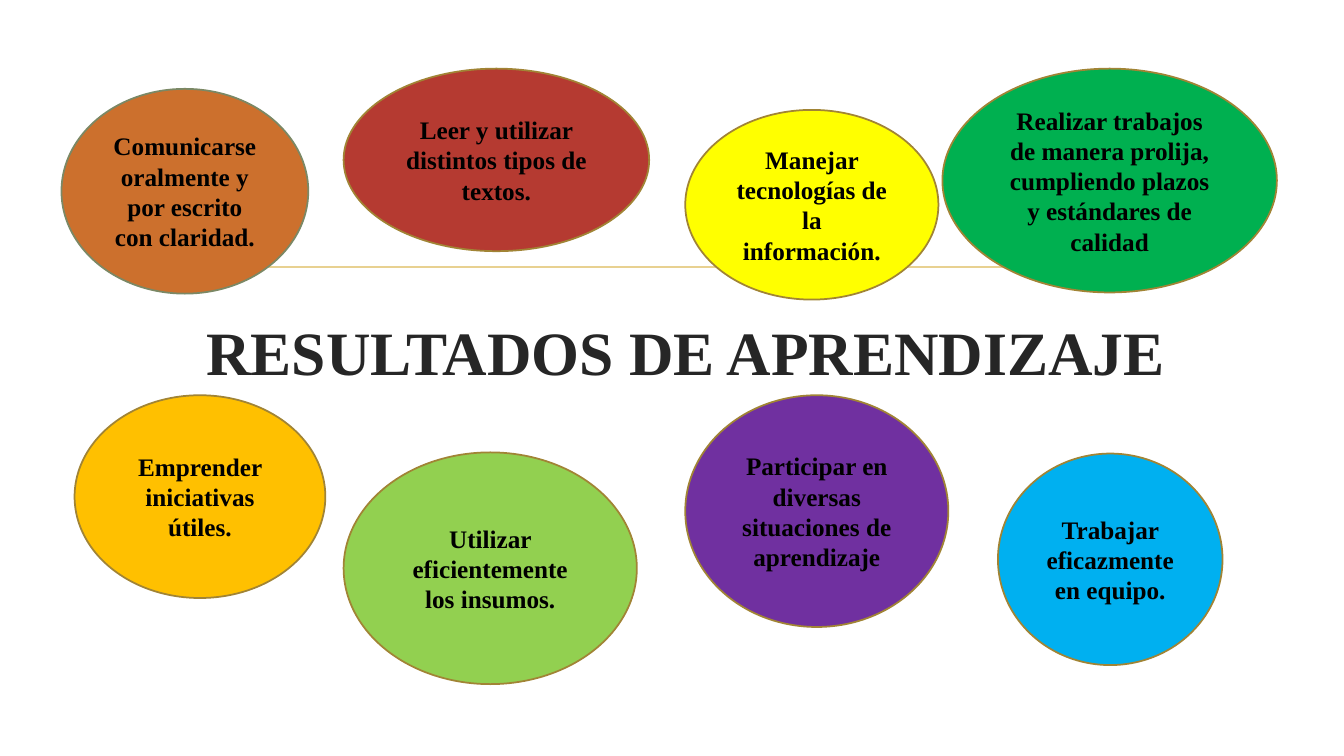
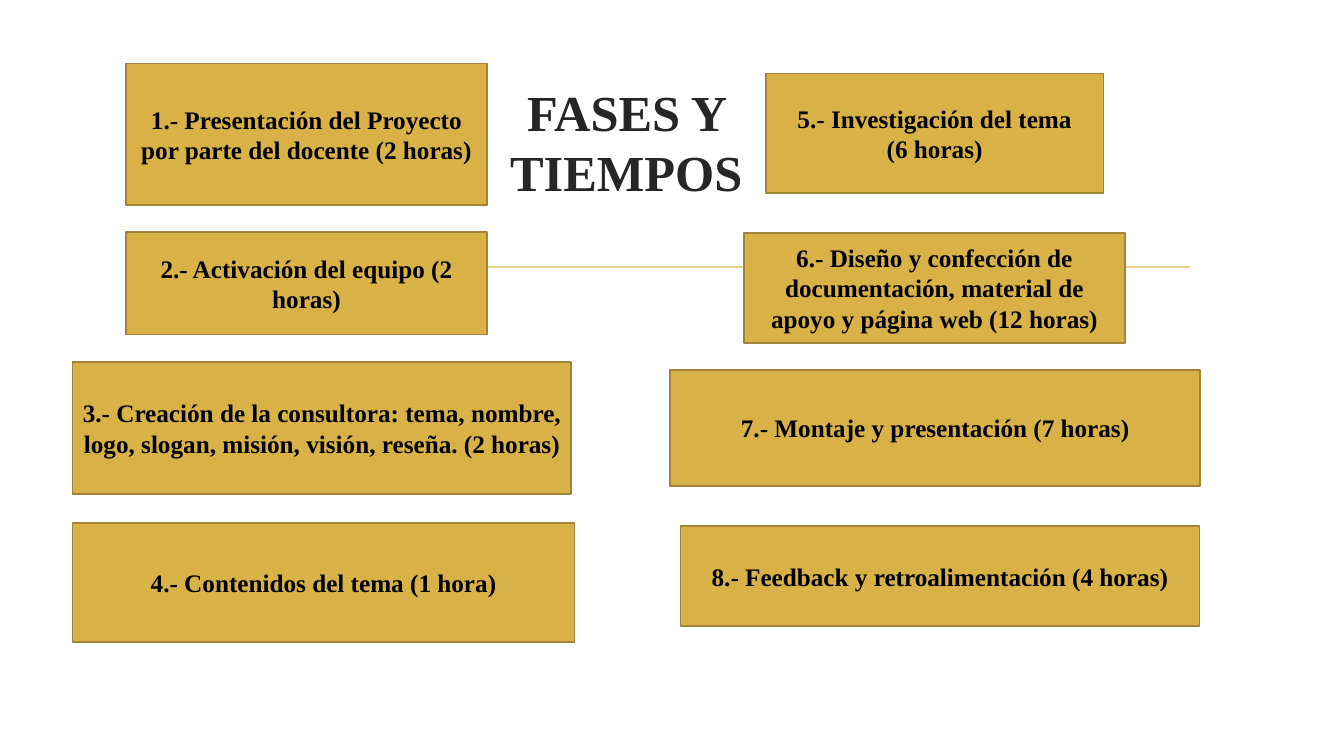
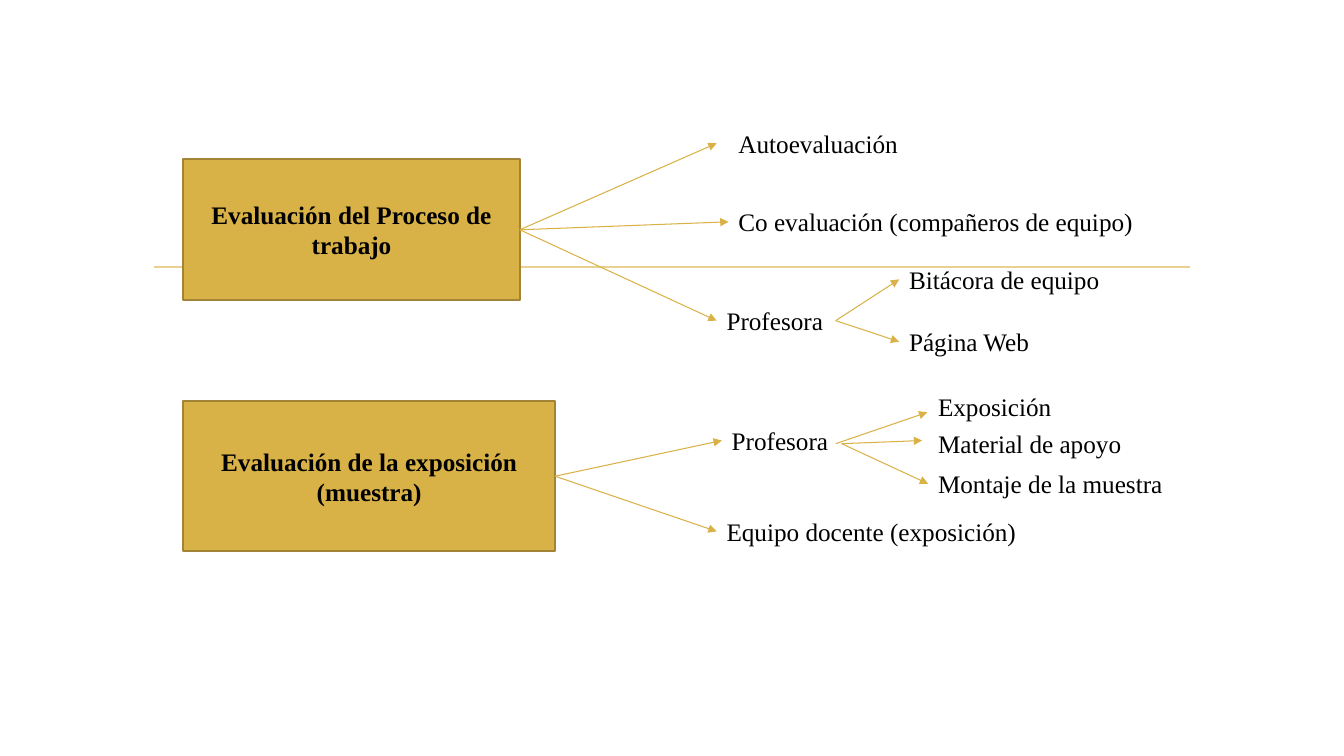
from dataclasses import dataclass

from lxml import etree
from pptx import Presentation
from pptx import util as u
from pptx.dml import color
from pptx.enum import shapes, text
from pptx.oxml import ns


@dataclass(frozen=True)
class Theme:
    font: str = "Times New Roman"
    gold: str = "D9B247"
    outline: str = "A18435"
    rule: str = "E8D191"
    heading: str = "262626"
    ink: str = "000000"
    body: float = 18
    border: float = 1.25
    arrow: float = 0.75


THEME = Theme()
RULE = ((3.89, 6.73), (30, 6.73))
LABEL_HEIGHT = 1.02

RESULTS_TITLE = ("RESULTADOS DE APRENDIZAJE", 44, (4.5, 7.44, 25.58, 2.79))
RESULTS = [
    ("Comunicarse oralmente y por escrito con claridad.", "CC702D", "7B8865", (1.55, 2.24, 6.22, 5.16)),
    ("Leer y utilizar distintos tipos de textos.", "B53A31", THEME.outline, (8.66, 1.73, 7.7, 4.6)),
    ("Realizar trabajos de manera prolija, cumpliendo plazos y estándares de calidad",
     "00B050", THEME.outline, (23.75, 1.73, 8.43, 5.64)),
    ("Trabajar eficazmente en equipo.", "00B0F0", THEME.outline, (25.15, 11.43, 5.66, 5.33)),
    ("Participar en diversas situaciones de aprendizaje", "7030A0", THEME.outline, (17.27, 9.96, 6.63, 5.84)),
    ("Manejar tecnologías de la información.", "FFFF00", THEME.outline, (17.27, 2.77, 6.38, 4.78)),
    ("Utilizar eficientemente los insumos.", "92D050", THEME.outline, (8.66, 11.4, 7.39, 5.84)),
    ("Emprender iniciativas útiles.", "FFC000", THEME.outline, (1.88, 9.96, 6.32, 5.11)),
]

PHASES_TITLE = ("FASES Y TIEMPOS", 36, (11.48, 1.75, 8.61, 3.63))
PHASES = [
    ("1.- Presentación del Proyecto por parte del docente (2 horas)", (3.18, 1.6, 9.09, 3.56)),
    ("2.- Activación del equipo (2 horas)", (3.18, 5.84, 9.09, 2.59)),
    ("3.- Creación de la consultora: tema, nombre, logo, slogan, misión, visión, reseña. (2 horas)",
     (1.83, 9.12, 12.57, 3.33)),
    ("4.- Contenidos del tema (1 hora)", (1.83, 13.18, 12.65, 3)),
    ("5.- Investigación del tema\n(6 horas)", (19.3, 1.85, 8.51, 3.02)),
    ("6.- Diseño y confección de documentación, material de apoyo y página web (12 horas)",
     (18.75, 5.87, 9.6, 2.77)),
    ("7.- Montaje y presentación (7 horas)", (16.89, 9.32, 13.36, 2.92)),
    ("8.- Feedback y retroalimentación (4 horas)", (17.15, 13.26, 13.08, 2.51)),
]

EVALUATION_BOXES = {
    "proceso": ("Evaluación del Proceso de trabajo", (4.62, 4.01, 8.48, 3.56)),
    "muestra": ("Evaluación de la exposición (muestra)", (4.62, 10.11, 9.37, 3.78)),
}
EVALUATION_LABELS = {
    "auto": ("Autoevaluación", (18.36, 3.1, 8.84)),
    "co": ("Co evaluación (compañeros de equipo)", (18.36, 5.08, 11.18)),
    "profesora proceso": ("Profesora", (18.06, 7.57, 3)),
    "bitácora": ("Bitácora de equipo", (22.66, 6.53, 5.46)),
    "web": ("Página Web", (22.66, 8.1, 5)),
    "profesora muestra": ("Profesora", (18.19, 10.59, 9.19)),
    "docentes": ("Equipo docente (exposición)", (18.06, 12.88, 11.63)),
    "exposición": ("Exposición", (23.39, 9.73, 7.49)),
    "material": ("Material de apoyo", (23.39, 10.67, 6.15)),
    "montaje": ("Montaje de la muestra", (23.39, 11.68, 6.3)),
}
EVALUATION_ARROWS = [
    ("proceso", (18.06, 3.61)),
    ("proceso", "co"),
    ("proceso", "profesora proceso"),
    ("profesora proceso", "bitácora"),
    ("profesora proceso", "web"),
    ("muestra", "profesora muestra"),
    ("muestra", "docentes"),
    ((21.06, 11.18), (23.37, 10.39)),
    ((21.21, 11.18), (23.24, 11.1)),
    ((21.21, 11.18), "montaje"),
]


def rgb(value):
    return color.RGBColor.from_string(value)


def cm(values):
    return [u.Cm(value) for value in values]


def write(shape, content, size=THEME.body, ink=THEME.ink, bold=True, centred=True):
    frame = shape.text_frame
    frame.word_wrap = True
    frame.vertical_anchor = text.MSO_ANCHOR.MIDDLE if centred else text.MSO_ANCHOR.TOP
    for index, line in enumerate(content.split("\n")):
        para = frame.add_paragraph() if index else frame.paragraphs[0]
        para.alignment = text.PP_ALIGN.CENTER if centred else text.PP_ALIGN.LEFT
        span = para.add_run()
        span.text = line
        span.font.name = THEME.font
        span.font.size = u.Pt(size)
        span.font.bold = bold
        span.font.color.rgb = rgb(ink)


def add_line(page, start, end, ink, width):
    line = page.shapes.add_connector(shapes.MSO_CONNECTOR.STRAIGHT, *cm(start + end))
    line.line.color.rgb = rgb(ink)
    line.line.width = u.Pt(width)
    etree.SubElement(line._element.spPr, ns.qn("a:effectLst"))
    return line


def add_arrow(page, start, end, nodes):
    origin = start if isinstance(start, tuple) else (0, 0)
    target = end if isinstance(end, tuple) else (0, 0)
    arrow = add_line(page, origin, target, THEME.gold, THEME.arrow)
    if start in nodes:
        arrow.begin_connect(nodes[start], 3)
    if end in nodes:
        arrow.end_connect(nodes[end], 1)
    etree.SubElement(arrow.line._get_or_add_ln(), ns.qn("a:tailEnd"), type="triangle")


def add_box(page, content, place, fill=THEME.gold, outline=THEME.outline,
            kind=shapes.MSO_SHAPE.RECTANGLE):
    box = page.shapes.add_shape(kind, *cm(place))
    box.shadow.inherit = False
    box.fill.solid()
    box.fill.fore_color.rgb = rgb(fill)
    box.line.color.rgb = rgb(outline)
    box.line.width = u.Pt(THEME.border)
    write(box, content)
    return box


def add_label(page, content, place):
    label = page.shapes.add_textbox(*cm((*place, LABEL_HEIGHT)))
    write(label, content, bold=False, centred=False)
    label.text_frame.auto_size = text.MSO_AUTO_SIZE.SHAPE_TO_FIT_TEXT
    return label


def add_page(deck, title=None):
    page = deck.slides.add_slide(deck.slide_layouts[6])
    add_line(page, *RULE, THEME.rule, THEME.border)
    if title:
        content, size, place = title
        write(page.shapes.add_textbox(*cm(place)), content, size, THEME.heading)
    return page


def build_results(deck):
    page = add_page(deck, RESULTS_TITLE)
    for content, fill, outline, place in RESULTS:
        add_box(page, content, place, fill, outline, shapes.MSO_SHAPE.OVAL)


def build_phases(deck):
    page = add_page(deck, PHASES_TITLE)
    for content, place in PHASES:
        add_box(page, content, place)


def build_evaluation(deck):
    page = add_page(deck)
    nodes = {key: add_box(page, *item) for key, item in EVALUATION_BOXES.items()}
    nodes.update({key: add_label(page, *item) for key, item in EVALUATION_LABELS.items()})
    for start, end in EVALUATION_ARROWS:
        add_arrow(page, start, end, nodes)


def main():
    deck = Presentation()
    deck.slide_width, deck.slide_height = cm((33.87, 19.05))
    build_results(deck)
    build_phases(deck)
    build_evaluation(deck)
    deck.save("out.pptx")


if __name__ == "__main__":
    main()
